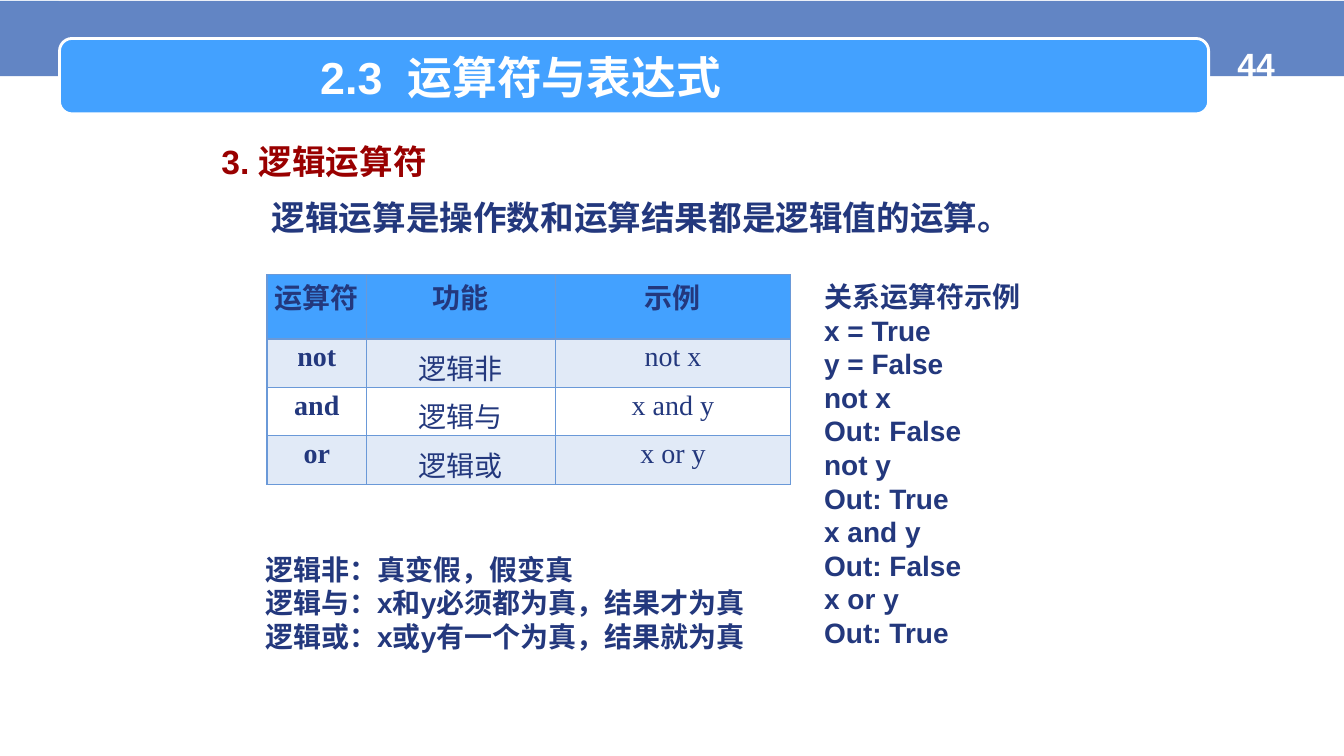
import dataclasses

import lxml.etree
import pptx
import pptx.dml.color
import pptx.enum.dml
import pptx.enum.shapes
import pptx.enum.text
import pptx.oxml
import pptx.oxml.ns
import pptx.util

Cm = pptx.util.Cm
Pt = pptx.util.Pt
ANCHOR = pptx.enum.text.MSO_ANCHOR
ALIGN = pptx.enum.text.PP_ALIGN
SHAPE = pptx.enum.shapes.MSO_SHAPE
qn = pptx.oxml.ns.qn


@dataclasses.dataclass(frozen=True)
class Theme:
    white: str = "FFFFFF"
    stripe: str = "CCECFF"
    band: str = "4972BB"
    accent: str = "43A1FF"
    grid: str = "6A99D8"
    navy: str = "23387D"
    red: str = "990000"
    title: int = 32
    heading: int = 24
    body: int = 20
    sans: str = "Arial"
    serif: str = "Times New Roman"


@dataclasses.dataclass(frozen=True)
class Box:
    left: float
    top: float
    width: float
    height: float

    def lengths(self):
        return [Cm(value) for value in dataclasses.astuple(self)]

    def area(self, left, top, width, height):
        return Box(self.left + left, self.top + top, width, height)


THEME = Theme()
PAGE = Box(0, 0, 33.87, 19.05)


def rgb(color):
    return pptx.dml.color.RGBColor.from_string(color)


def apply_format(target, values):
    for name, value in values.items():
        setattr(target, name, value)


def set_fill(fill, color, opacity=100):
    fill.solid()
    fill.fore_color.rgb = rgb(color)
    if opacity < 100:
        color_element = fill._xPr.find(f"{qn('a:solidFill')}/{qn('a:srgbClr')}")
        lxml.etree.SubElement(color_element, qn("a:alpha"), val=str(opacity * 1000))


def write_paragraph(paragraph, text, size, color, font=THEME.sans, bold=True, **layout):
    apply_format(paragraph, layout)
    run = paragraph.add_run()
    run.text = text
    apply_format(run.font, {"name": font, "size": Pt(size), "bold": bold})
    run.font.color.rgb = rgb(color)


def add_text(slide, box, paragraphs):
    frame = slide.shapes.add_textbox(*box.lengths()).text_frame
    frame.word_wrap = True
    for index, values in enumerate(paragraphs):
        paragraph = frame.add_paragraph() if index else frame.paragraphs[0]
        write_paragraph(paragraph, **values)
    return frame


def add_panel(slide, box, kind=SHAPE.RECTANGLE):
    shape = slide.shapes.add_shape(kind, *box.lengths())
    shape.shadow.inherit = False
    shape.line.fill.background()
    return shape


def add_header(slide, box, title, number):
    strip = add_panel(slide, box.area(0, 0, 1.48, PAGE.height - box.top))
    strip.fill.patterned()
    strip.fill.pattern = pptx.enum.dml.MSO_PATTERN.DARK_HORIZONTAL
    strip.fill.fore_color.rgb = rgb(THEME.white)
    strip.fill.back_color.rgb = rgb(THEME.stripe)

    band = add_panel(slide, box)
    set_fill(band.fill, THEME.band, 86)

    plate = add_panel(slide, box.area(1.5, 0.95, 28.96, 1.9), SHAPE.ROUNDED_RECTANGLE)
    set_fill(plate.fill, THEME.accent)
    set_fill(plate.line.fill, THEME.white)
    plate.line.width = Pt(2)

    add_text(slide, box.area(30.12, 0.97, 3.07, 1.8), [
        dict(text=number, size=THEME.heading, color=THEME.white, alignment=ALIGN.CENTER)])
    add_text(slide, box.area(7.82, 1.1, 18.21, 1.63), [
        dict(text=title, size=THEME.title, color=THEME.white)])


def add_introduction(slide, box, heading, sentence):
    common = dict(size=THEME.heading, line_spacing=1.4)
    frame = add_text(slide, box, [
        dict(text=heading, color=THEME.red, space_before=Pt(5), **common),
        dict(text=sentence, color=THEME.navy, **common)])
    frame.paragraphs[1]._p.get_or_add_pPr().set("indent", str(Cm(1.27)))


def set_borders(cell, widths):
    properties = cell._tc.get_or_add_tcPr()
    for side, width in widths.items():
        line = lxml.etree.SubElement(properties, qn(f"a:ln{side}"), w=str(Pt(width)))
        fill = lxml.etree.SubElement(line, qn("a:solidFill"))
        lxml.etree.SubElement(fill, qn("a:srgbClr"), val=THEME.grid)


def add_operator_table(slide, box, rows):
    table = slide.shapes.add_table(len(rows), len(rows[0]), *box.lengths()).table
    apply_format(table, {"first_row": False, "horz_banding": False})
    for column, share in zip(table.columns, (0.19, 0.36, 0.45)):
        column.width = Cm(box.width * share)
    header_height = 1.62
    for index, row in enumerate(table.rows):
        row.height = Cm((box.height - header_height) / (len(rows) - 1) if index else header_height)

    for row_index, row in enumerate(rows):
        is_header = row_index == 0
        for column_index, text in enumerate(row):
            cell = table.cell(row_index, column_index)
            is_function = column_index == 1 and not is_header
            apply_format(cell, {
                "margin_left": Cm(0.18), "margin_right": Cm(0.18),
                "margin_top": 0, "margin_bottom": 0,
                "vertical_anchor": ANCHOR.BOTTOM if is_function else ANCHOR.MIDDLE})
            write_paragraph(
                cell.text_frame.paragraphs[0], text, THEME.body, THEME.navy,
                font=THEME.sans if is_header else THEME.serif,
                bold=is_header or column_index == 0,
                alignment=ALIGN.CENTER, line_spacing=Pt(14))
            set_borders(cell, {"L": 1, "R": 1, "T": 1, "B": 2 if is_header else 1})
            if is_header:
                set_fill(cell.fill, THEME.accent)
            elif row_index % 2:
                set_fill(cell.fill, THEME.grid, 20)
            else:
                cell.fill.background()


def add_rules(slide, box, lines):
    add_text(slide, box, [dict(text=line, size=THEME.body, color=THEME.navy) for line in lines])


def add_example(slide, box, heading, lines):
    common = dict(size=THEME.body, color=THEME.navy)
    add_text(slide, box, [
        dict(text=heading, line_spacing=1.4, space_before=Pt(4), **common),
        *(dict(text=line, line_spacing=Pt(24), **common) for line in lines)])


def main():
    presentation = pptx.Presentation()
    apply_format(presentation, {
        "slide_width": Cm(PAGE.width), "slide_height": Cm(PAGE.height)})
    slide = presentation.slides.add_slide(presentation.slide_layouts[6])

    add_header(slide, Box(0, 0.02, PAGE.width, 1.9), "2.3  运算符与表达式", "44")
    add_introduction(slide, Box(5.33, 3.02, 24.31, 3.3),
                     "3. 逻辑运算符", "逻辑运算是操作数和运算结果都是逻辑值的运算。")
    add_operator_table(slide, Box(6.73, 6.92, 13.2, 5.28), [
        ("运算符", "功能", "示例"),
        ("not", "逻辑非", "not x"),
        ("and", "逻辑与", "x and y"),
        ("or", "逻辑或", "x or y")])
    add_rules(slide, Box(6.43, 13.79, 13.49, 2.82), [
        "逻辑非：真变假，假变真",
        "逻辑与：x和y必须都为真，结果才为真",
        "逻辑或：x或y有一个为真，结果就为真"])
    add_example(slide, Box(20.52, 6.58, 6.1, 9.75), "关系运算符示例", [
        "x = True", "y = False", "not x", "Out: False", "not y", "Out: True",
        "x and y", "Out: False", "x or y", "Out: True"])
    presentation.save("out.pptx")


if __name__ == "__main__":
    main()
